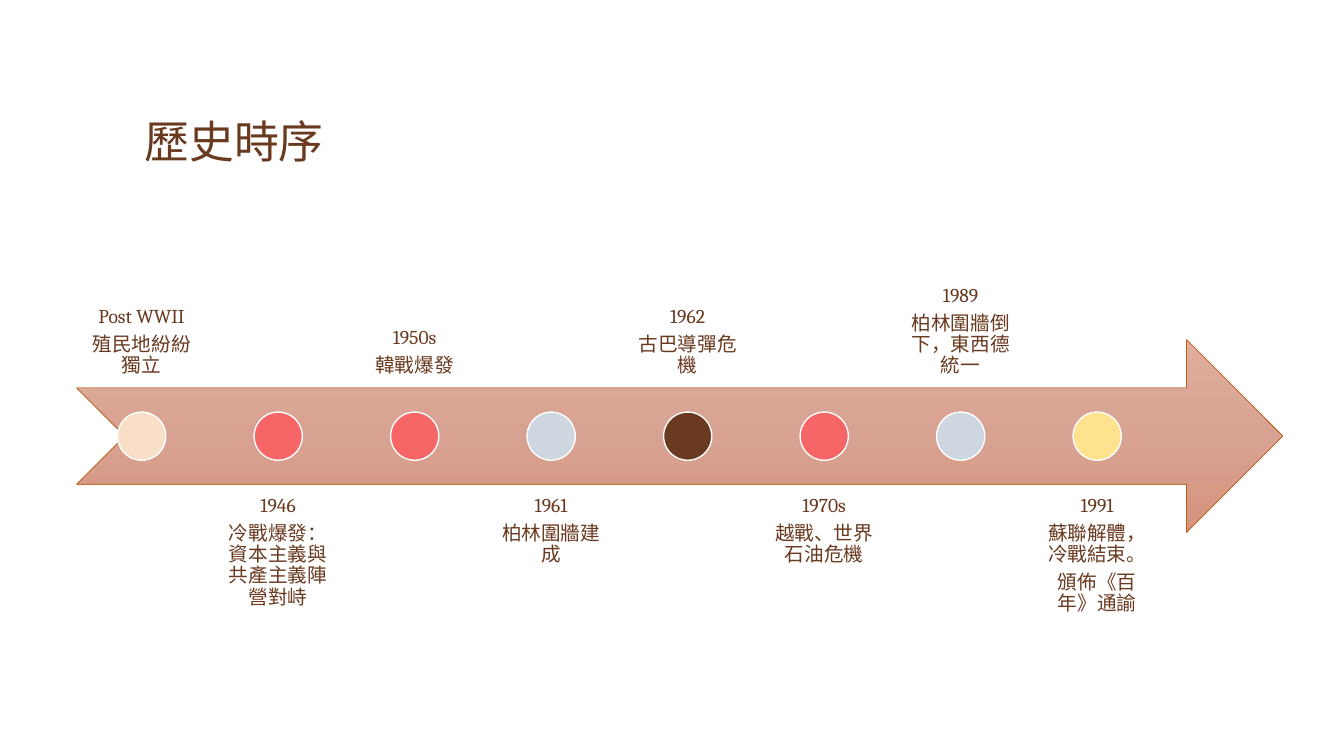
from copy import deepcopy
from dataclasses import dataclass

from lxml.etree import SubElement
from pptx import Presentation
from pptx.dml.color import RGBColor
from pptx.enum.shapes import MSO_SHAPE
from pptx.enum.text import MSO_ANCHOR, MSO_AUTO_SIZE, PP_ALIGN
from pptx.oxml.ns import qn
from pptx.util import Cm, Pt


@dataclass(frozen=True)
class Theme:
    brown: str = "6A3A20"
    cream: str = "F9DEC8"
    red: str = "F66666"
    grey: str = "CED7DF"
    yellow: str = "FFE28D"
    white: str = "FFFFFF"
    arrow_line: str = "B95E14"
    arrow_fill: tuple = ("E1AE9E", "D7A291", "D5937C")
    latin: str = "Cambria"
    cjk: str = "Noto Sans CJK TC"
    title_size: int = 32
    label_size: int = 14


THEME = Theme()

EVENTS = [
    (THEME.cream, "Post WWII", "殖民地紛紛獨立"),
    (THEME.red, "1946", "冷戰爆發：資本主義與共產主義陣營對峙"),
    (THEME.red, "1950s", "韓戰爆發"),
    (THEME.grey, "1961", "柏林圍牆建成"),
    (THEME.brown, "1962", "古巴導彈危機"),
    (THEME.red, "1970s", "越戰、世界石油危機"),
    (THEME.grey, "1989", "柏林圍牆倒下，東西德統一"),
    (THEME.yellow, "1991", "蘇聯解體，冷戰結束。", "頒佈《百年》通諭"),
]


def rgb(color):
    return RGBColor.from_string(color)


def format_runs(p, size, latin):
    for r in p.runs:
        r.font.size = Pt(size)
        r.font.name = latin
        r.font.color.rgb = rgb(THEME.brown)
        SubElement(r.font._element, qn("a:ea"), typeface=THEME.cjk)


def add_title(s, text, left, top, width, height):
    sp = s.shapes.title
    sp.left, sp.top, sp.width, sp.height = left, top, width, height
    tf = sp.text_frame
    tf.text = text
    tf.auto_size = MSO_AUTO_SIZE.NONE
    tf.vertical_anchor = MSO_ANCHOR.BOTTOM
    p = tf.paragraphs[0]
    p.alignment = PP_ALIGN.LEFT
    format_runs(p, THEME.title_size, THEME.cjk)


def add_arrow(s, left, top, width, height):
    sp = s.shapes.add_shape(MSO_SHAPE.NOTCHED_RIGHT_ARROW, left, top, width, height)
    sp.shadow.inherit = False
    sp.line.color.rgb = rgb(THEME.arrow_line)
    sp.line.width = Pt(0.5)
    sp.fill.gradient()
    sp.fill.gradient_angle = 270
    first = sp._element.spPr.find(".//" + qn("a:gs"))
    first.addnext(deepcopy(first))
    for i, (stop, color) in enumerate(zip(sp.fill.gradient_stops, THEME.arrow_fill)):
        stop.position = i / 2
        stop.color.rgb = rgb(color)


def add_dot(s, left, top, size, color):
    sp = s.shapes.add_shape(MSO_SHAPE.OVAL, left, top, size, size)
    sp.shadow.inherit = False
    sp.fill.solid()
    sp.fill.fore_color.rgb = rgb(color)
    sp.line.color.rgb = rgb(THEME.white)
    sp.line.width = Pt(1)


def add_label(s, lines, left, top, width, height, anchor):
    tf = s.shapes.add_textbox(left, top, width, height).text_frame
    tf.word_wrap = True
    tf.vertical_anchor = anchor
    tf.margin_left = tf.margin_top = tf.margin_right = tf.margin_bottom = Cm(0.28)
    tf.text = "\n".join(lines)
    for p in tf.paragraphs:
        p.alignment = PP_ALIGN.CENTER
        p.line_spacing = 0.9
        p.space_after = Pt(4.9)
        format_runs(p, THEME.label_size, THEME.latin)


def add_timeline(s, events, left, top, width, height):
    """Draw the arrow with evenly spaced dots and labels alternately above and below."""
    add_arrow(s, left, top, width, height)
    label_width, step = Cm(3.28), Cm(3.44)
    dot, offset = height // 4, height * 3 // 4
    for i, (color, *lines) in enumerate(events):
        x = left + i * step
        if i % 2:
            y, anchor = top + offset, MSO_ANCHOR.TOP
        else:
            y, anchor = top - offset, MSO_ANCHOR.BOTTOM
        add_label(s, lines, x, y, label_width, height, anchor)
        add_dot(s, x + (label_width - dot) // 2, top + (height - dot) // 2, dot, color)


def main():
    prs = Presentation()
    prs.slide_width, prs.slide_height = Cm(33.87), Cm(19.05)
    s = prs.slides.add_slide(prs.slide_layouts[5])
    add_title(s, "歷史時序", Cm(3.39), Cm(1.11), Cm(27.08), Cm(3.25))
    add_timeline(s, EVENTS, Cm(1.93), Cm(8.56), Cm(30.4), Cm(4.86))
    prs.save("out.pptx")


if __name__ == "__main__":
    main()
